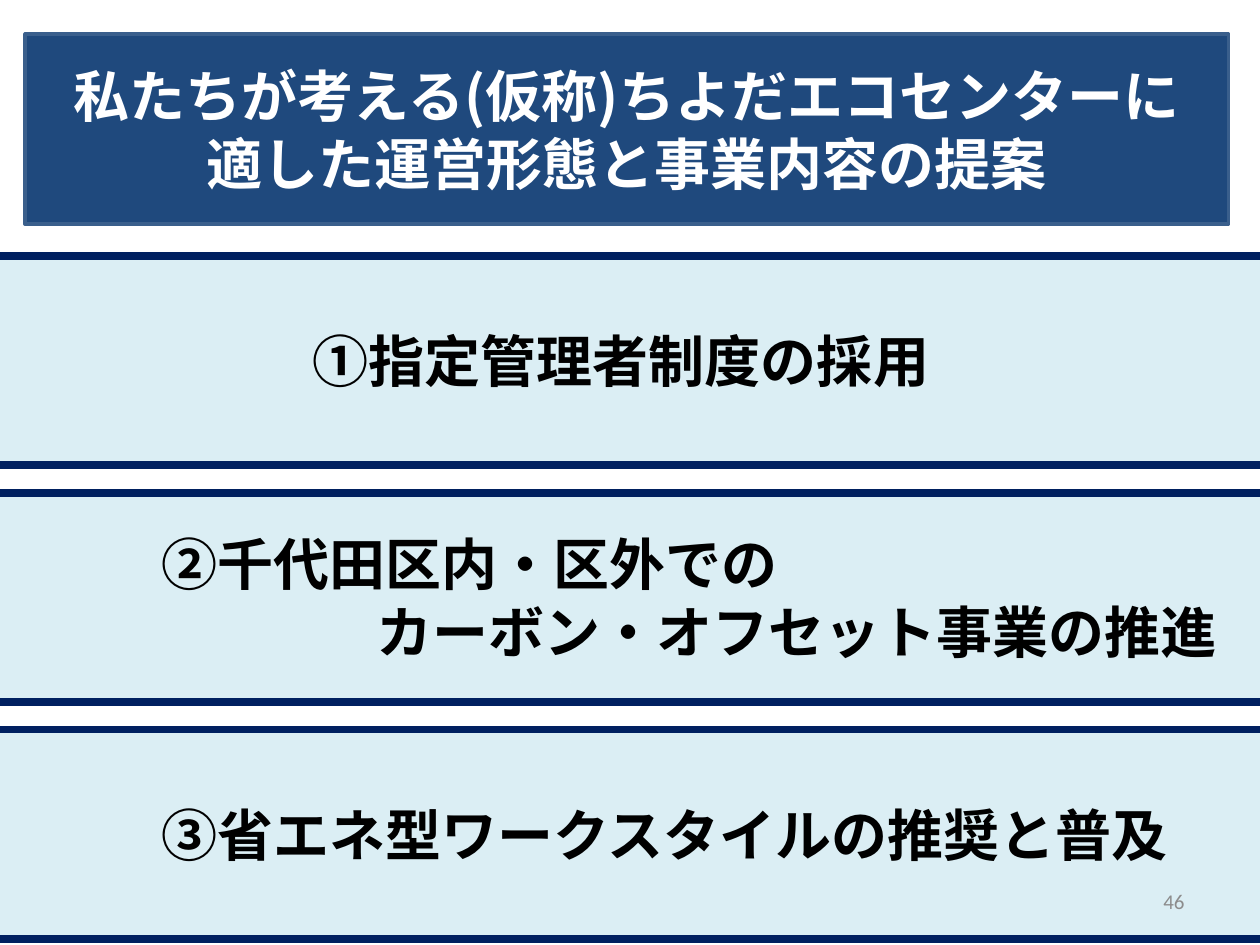
from lxml.etree import SubElement
from pptx import Presentation
from pptx.dml.color import RGBColor
from pptx.enum.shapes import MSO_SHAPE
from pptx.enum.text import MSO_ANCHOR, MSO_AUTO_SIZE, PP_ALIGN
from pptx.oxml import parse_xml
from pptx.oxml.ns import nsdecls, qn
from pptx.util import Inches, Pt

JP_FONT = "Noto Sans CJK JP"
HEADING = {"name": JP_FONT, "size": Pt(32), "bold": True}
PAGE_NUMBER = {"name": "Calibri", "size": Pt(12), "bold": False}

# Each band: left, width, lines as (text, alignment, indent)
BANDS = [
    (-0.28, 10.42, [("①指定管理者制度の採用", PP_ALIGN.CENTER, 0)]),
    (-0.15, 10.28, [("②千代田区内・区外での", PP_ALIGN.LEFT, 1.33),
                    ("カーボン・オフセット事業の推進", PP_ALIGN.LEFT, 3.04)]),
    (-0.15, 10.28, [("③省エネ型ワークスタイルの推奨と普及", PP_ALIGN.LEFT, 1.33)]),
]
BAND_TOP, BAND_STEP, BAND_HEIGHT = 2.03, 1.88, 1.66


def rgb(value):
    return RGBColor.from_string(value)


def paint(sp, fill, line, width):
    sp.fill.solid()
    sp.fill.fore_color.rgb = rgb(fill)
    sp.line.color.rgb = rgb(line)
    sp.line.width = Pt(width)


def write(sp, lines, font, color):
    """Fill a shape with (text, alignment, indent) lines."""
    tf = sp.text_frame
    tf.word_wrap = True
    tf.auto_size = MSO_AUTO_SIZE.NONE
    tf.vertical_anchor = MSO_ANCHOR.MIDDLE
    for i, (text, align, indent) in enumerate(lines):
        p = tf.add_paragraph() if i else tf.paragraphs[0]
        p.alignment = align
        if indent:
            p._p.get_or_add_pPr().set("marL", str(Inches(indent)))
        r = p.add_run()
        r.text = text
        for name, value in font.items():
            setattr(r.font, name, value)
        r.font.color.rgb = rgb(color)
        SubElement(r._r.get_or_add_rPr(), qn("a:ea"), typeface=font["name"])


def add_title(slide, lines):
    sp = slide.shapes.title
    sp.left, sp.top, sp.width, sp.height = map(Inches, (0.2, 0.27, 9.55, 1.51))
    # Rounded outline for the placeholder
    sp._element.spPr.insert(1, parse_xml(
        f'<a:prstGeom {nsdecls("a")} prst="roundRect"><a:avLst/></a:prstGeom>'))
    paint(sp, "1F497D", "3A5F8C", 2)
    sp.text_frame.margin_left = sp.text_frame.margin_right = Inches(0.05)
    write(sp, [(line, PP_ALIGN.CENTER, 0) for line in lines], HEADING, "FFFFFF")


def add_band(slide, left, top, width, lines):
    sp = slide.shapes.add_shape(MSO_SHAPE.RECTANGLE, Inches(left), Inches(top),
                                Inches(width), Inches(BAND_HEIGHT))
    sp.shadow.inherit = False
    paint(sp, "DBEEF4", "002060", 4.5)
    write(sp, lines, HEADING, "000000")


def add_page_number(slide, number):
    sp = slide.shapes.add_textbox(*map(Inches, (7.17, 6.95, 2.33, 0.4)))
    write(sp, [(number, PP_ALIGN.RIGHT, 0)], PAGE_NUMBER, "8C8C8C")


def main():
    prs = Presentation()
    prs.slide_width, prs.slide_height = Inches(10), Inches(7.5)
    slide = prs.slides.add_slide(prs.slide_layouts[5])

    add_title(slide, ["私たちが考える(仮称)ちよだエコセンターに",
                      "適した運営形態と事業内容の提案"])
    # Three proposals, evenly stacked
    for i, (left, width, lines) in enumerate(BANDS):
        add_band(slide, left, BAND_TOP + i * BAND_STEP, width, lines)
    add_page_number(slide, "46")

    prs.save("out.pptx")


if __name__ == "__main__":
    main()
